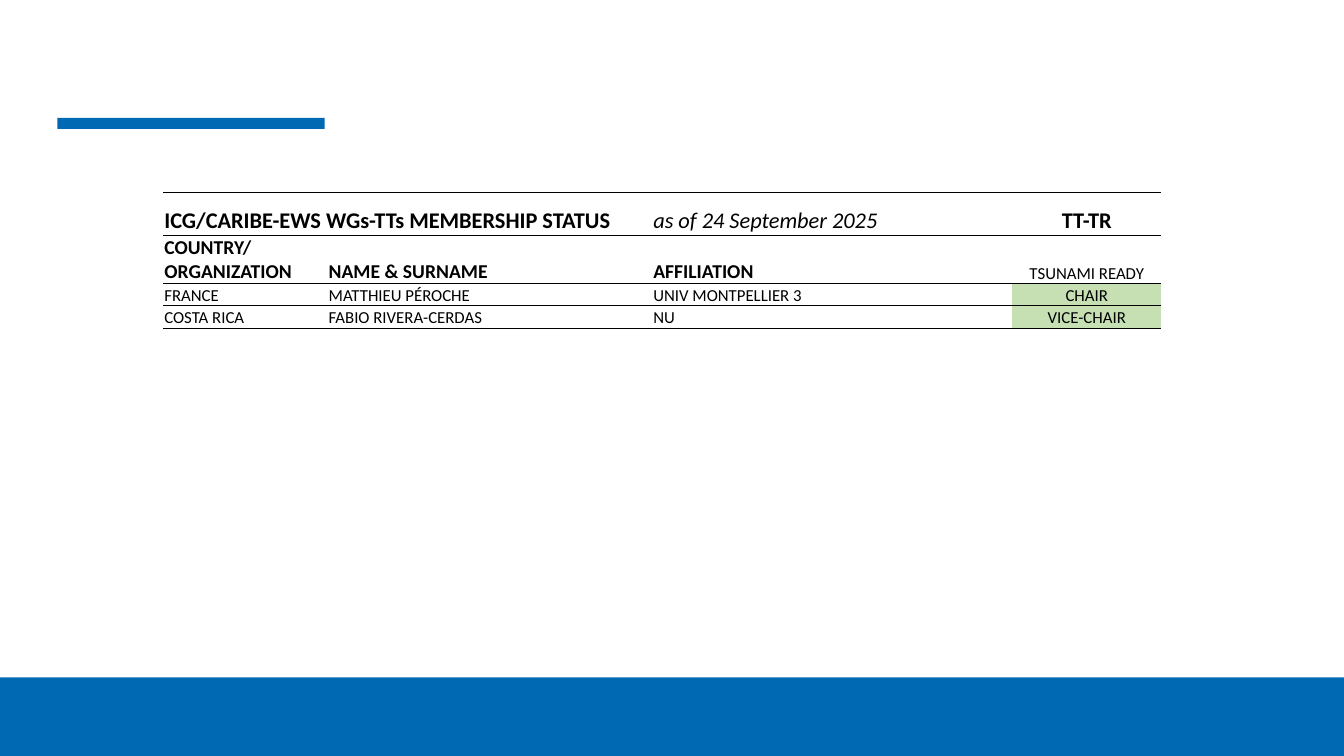
"""Build the task team membership status slide."""
from dataclasses import dataclass

from lxml.etree import SubElement
from pptx import Presentation
from pptx.dml.color import RGBColor
from pptx.enum.shapes import MSO_SHAPE as Shape
from pptx.enum.text import MSO_ANCHOR as Anchor, PP_ALIGN as Align
from pptx.oxml.ns import qn
from pptx.slide import Slide
from pptx.table import _Cell as Cell
from pptx.util import Inches, Pt


@dataclass(frozen=True)
class Theme:
    font: str = "Calibri"
    blue: str = "0069B4"
    green: str = "C6E0B4"
    black: str = "000000"
    heading: int = 16
    label: int = 14
    body: int = 12
    rule: float = 0.5


@dataclass(frozen=True)
class Bar:
    left: float
    top: float
    width: float
    height: float


@dataclass(frozen=True)
class Entry:
    text: str
    size: int
    bold: bool = False
    italic: bool = False
    fill: str = ""


THEME = Theme()
BARS = [Bar(0.57, 1.17, 2.65, 0.11), Bar(0, 6.72, 13.33, 0.78)]
COLUMNS = [1.63, 3.22, 3.57, 1.48]
ROWS = [0.42, 0.47, 0.22, 0.22]
MEMBERS = [
    ("FRANCE", "MATTHIEU PÉROCHE", "UNIV MONTPELLIER 3", "CHAIR"),
    ("COSTA RICA", "FABIO RIVERA-CERDAS", "NU", "VICE-CHAIR"),
]


def member_row(member: tuple[str, ...]) -> list[Entry]:
    *details, role = member
    return [Entry(text, THEME.body) for text in details] + [
        Entry(role, THEME.body, fill=THEME.green)
    ]


ENTRIES = [
    [
        Entry("ICG/CARIBE-EWS WGs-TTs MEMBERSHIP STATUS", THEME.heading, bold=True),
        Entry("", THEME.heading),
        Entry("as of 24 September 2025", THEME.heading, italic=True),
        Entry("TT-TR", THEME.heading, bold=True),
    ],
    [
        Entry("COUNTRY/ORGANIZATION", THEME.label, bold=True),
        Entry("NAME & SURNAME", THEME.label, bold=True),
        Entry("AFFILIATION", THEME.label, bold=True),
        Entry("TSUNAMI READY", THEME.body),
    ],
    *[member_row(member) for member in MEMBERS],
]


def rgb(color: str) -> RGBColor:
    return RGBColor.from_string(color)


def add_bar(s: Slide, bar: Bar) -> None:
    sp = s.shapes.add_shape(
        Shape.RECTANGLE, Inches(bar.left), Inches(bar.top),
        Inches(bar.width), Inches(bar.height),
    )
    sp.shadow.inherit = False
    sp.fill.solid()
    sp.fill.fore_color.rgb = rgb(THEME.blue)
    sp.line.fill.background()


def set_borders(cell: Cell) -> None:
    props = cell._tc.get_or_add_tcPr()
    for side in ("lnL", "lnR"):
        SubElement(SubElement(props, qn(f"a:{side}"), w="0"), qn("a:noFill"))
    for side in ("lnT", "lnB"):
        line = SubElement(props, qn(f"a:{side}"), w=str(Pt(THEME.rule)))
        SubElement(SubElement(line, qn("a:solidFill")), qn("a:srgbClr"), val=THEME.black)


def fill_cell(cell: Cell, entry: Entry, centred: bool) -> None:
    set_borders(cell)
    if entry.fill:
        cell.fill.solid()
        cell.fill.fore_color.rgb = rgb(entry.fill)
    else:
        cell.fill.background()
    cell.vertical_anchor = Anchor.BOTTOM
    cell.margin_left = cell.margin_right = cell.margin_top = Inches(0.01)
    cell.margin_bottom = 0
    cell.text = entry.text
    p = cell.text_frame.paragraphs[0]
    p.alignment = Align.CENTER if centred else Align.LEFT
    p.font.name = THEME.font
    p.font.size = Pt(entry.size)
    p.font.bold = entry.bold
    p.font.italic = entry.italic
    p.font.color.rgb = rgb(THEME.black)


def add_members(s: Slide) -> None:
    table = s.shapes.add_table(
        len(ROWS), len(COLUMNS), Inches(1.62), Inches(1.91),
        Inches(sum(COLUMNS)), Inches(sum(ROWS)),
    ).table
    table.first_row = table.horz_banding = False
    for column, width in zip(table.columns, COLUMNS):
        column.width = Inches(width)
    for row, height, entries in zip(table.rows, ROWS, ENTRIES):
        row.height = Inches(height)
        for i, (cell, entry) in enumerate(zip(row.cells, entries)):
            fill_cell(cell, entry, centred=i == len(COLUMNS) - 1)
    table.cell(0, 0).merge(table.cell(0, 1))


def main() -> None:
    prs = Presentation()
    prs.slide_width, prs.slide_height = Inches(13.33), Inches(7.5)
    s = prs.slides.add_slide(prs.slide_layouts[6])
    for bar in BARS:
        add_bar(s, bar)
    add_members(s)
    prs.save("out.pptx")


if __name__ == "__main__":
    main()
